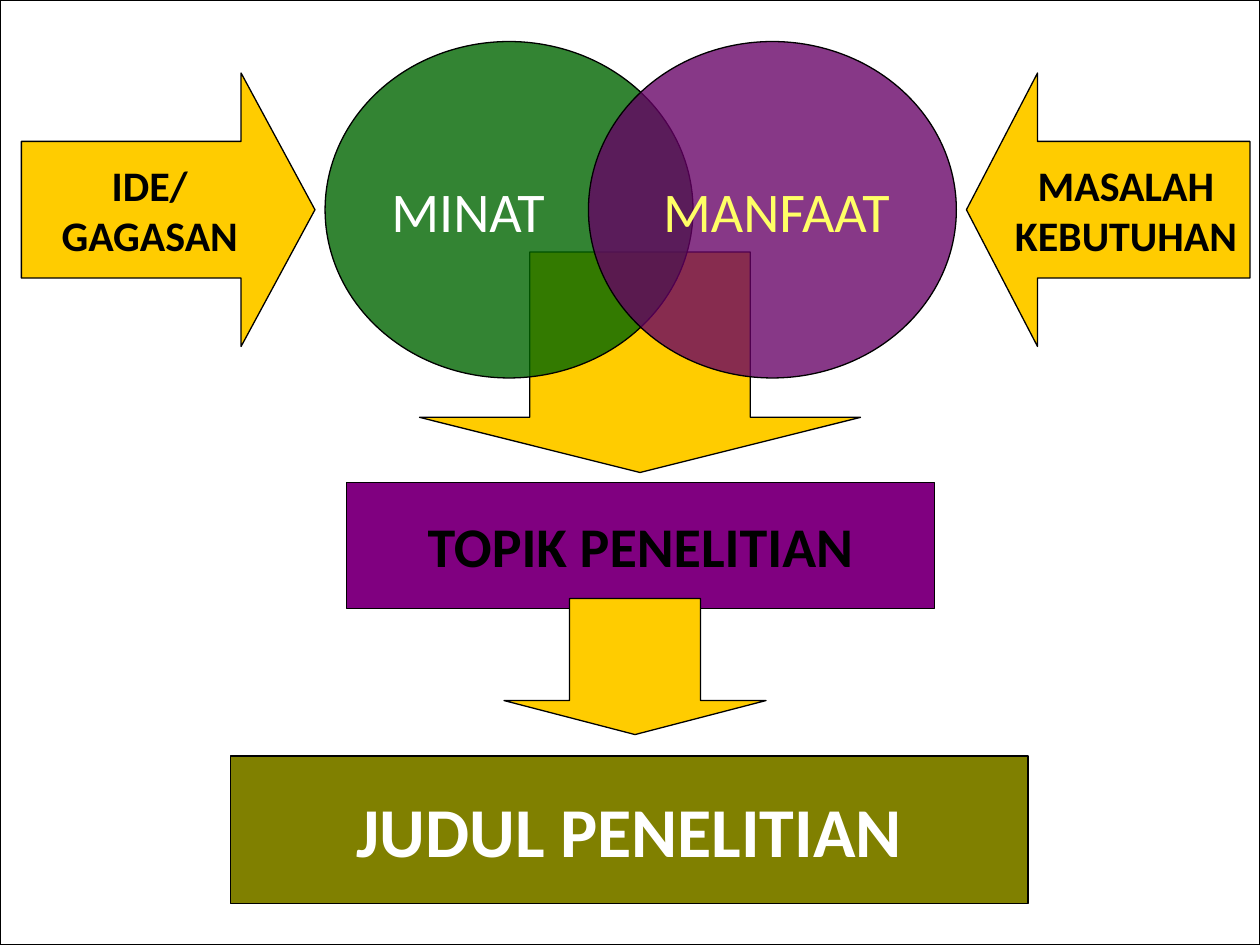
from lxml.etree import SubElement
from pptx import Presentation
from pptx.dml.color import RGBColor
from pptx.enum.shapes import MSO_SHAPE
from pptx.enum.text import MSO_ANCHOR, PP_ALIGN
from pptx.oxml.ns import qn
from pptx.util import Inches, Pt

COLORS = {
    "white": "FFFFFF",
    "black": "000000",
    "gold": "FFCC00",
    "green": "006600",
    "plum": "660066",
    "purple": "800080",
    "olive": "808000",
    "yellow": "FFFF66",
}


def color(name):
    return RGBColor.from_string(COLORS[name])


def write(shape, text, size=24, ink="black", bold=True, align=PP_ALIGN.CENTER):
    frame = shape.text_frame
    frame.word_wrap = False
    frame.vertical_anchor = MSO_ANCHOR.MIDDLE
    for index, line in enumerate(text.split("\n")):
        para = frame.paragraphs[0] if index == 0 else frame.add_paragraph()
        para.alignment = align
        span = para.add_run()
        span.text = line
        span.font.name = "Calibri"
        span.font.size = Pt(size)
        span.font.bold = bold
        span.font.color.rgb = color(ink)


class Diagram:
    line_width = Pt(0.75)

    def __init__(self, page):
        self.page = page

    def shape(self, kind, left, top, width, height, fill):
        shape = self.page.shapes.add_shape(
            kind, Inches(left), Inches(top), Inches(width), Inches(height))
        shape.shadow.inherit = False
        shape.fill.solid()
        shape.fill.fore_color.rgb = color(fill)
        shape.line.color.rgb = color("black")
        shape.line.width = self.line_width
        return shape

    def box(self, left, top, width, height, fill, text="", **style):
        box = self.shape(MSO_SHAPE.RECTANGLE, left, top, width, height, fill)
        if text:
            write(box, text, **style)

    def arrow(self, kind, left, top, width, height, head=0.25, text=""):
        arrow = self.shape(kind, left, top, width, height, "gold")
        arrow.adjustments[0] = 0.5
        arrow.adjustments[1] = head
        if text:
            write(arrow, text)

    def circle(self, left, fill, opacity, text, **style):
        circle = self.shape(MSO_SHAPE.OVAL, left, 0.33, 2.92, 2.67, fill)
        solid = circle.element.spPr.find(qn("a:solidFill"))
        SubElement(solid[0], qn("a:alpha"), val=str(opacity * 1000))
        write(circle, text, size=32, bold=False, **style)


def main():
    deck = Presentation()
    deck.slide_width = Inches(10)
    deck.slide_height = Inches(7.5)
    diagram = Diagram(deck.slides.add_slide(deck.slide_layouts[6]))

    diagram.box(0, 0, 10, 7.5, "white")
    diagram.arrow(MSO_SHAPE.DOWN_ARROW, 3.33, 2, 3.5, 1.75)
    diagram.circle(2.58, "green", 80, "MINAT", ink="white", align=PP_ALIGN.LEFT)
    diagram.circle(4.67, "plum", 78, "MANFAAT", ink="yellow", align=PP_ALIGN.RIGHT)
    diagram.arrow(MSO_SHAPE.RIGHT_ARROW, 0.17, 0.58, 2.33, 2.17, 0.27, "IDE/\nGAGASAN")
    diagram.arrow(MSO_SHAPE.LEFT_ARROW, 7.67, 0.58, 2.25, 2.17, 0.26, "MASALAH\nKEBUTUHAN")
    diagram.box(2.75, 3.83, 4.67, 1, "purple", "TOPIK PENELITIAN", size=32)
    diagram.box(1.83, 6, 6.33, 1.17, "olive", "JUDUL PENELITIAN", size=40, ink="white")
    diagram.arrow(MSO_SHAPE.DOWN_ARROW, 4, 4.75, 2.08, 1.08)

    deck.save("out.pptx")


if __name__ == "__main__":
    main()
